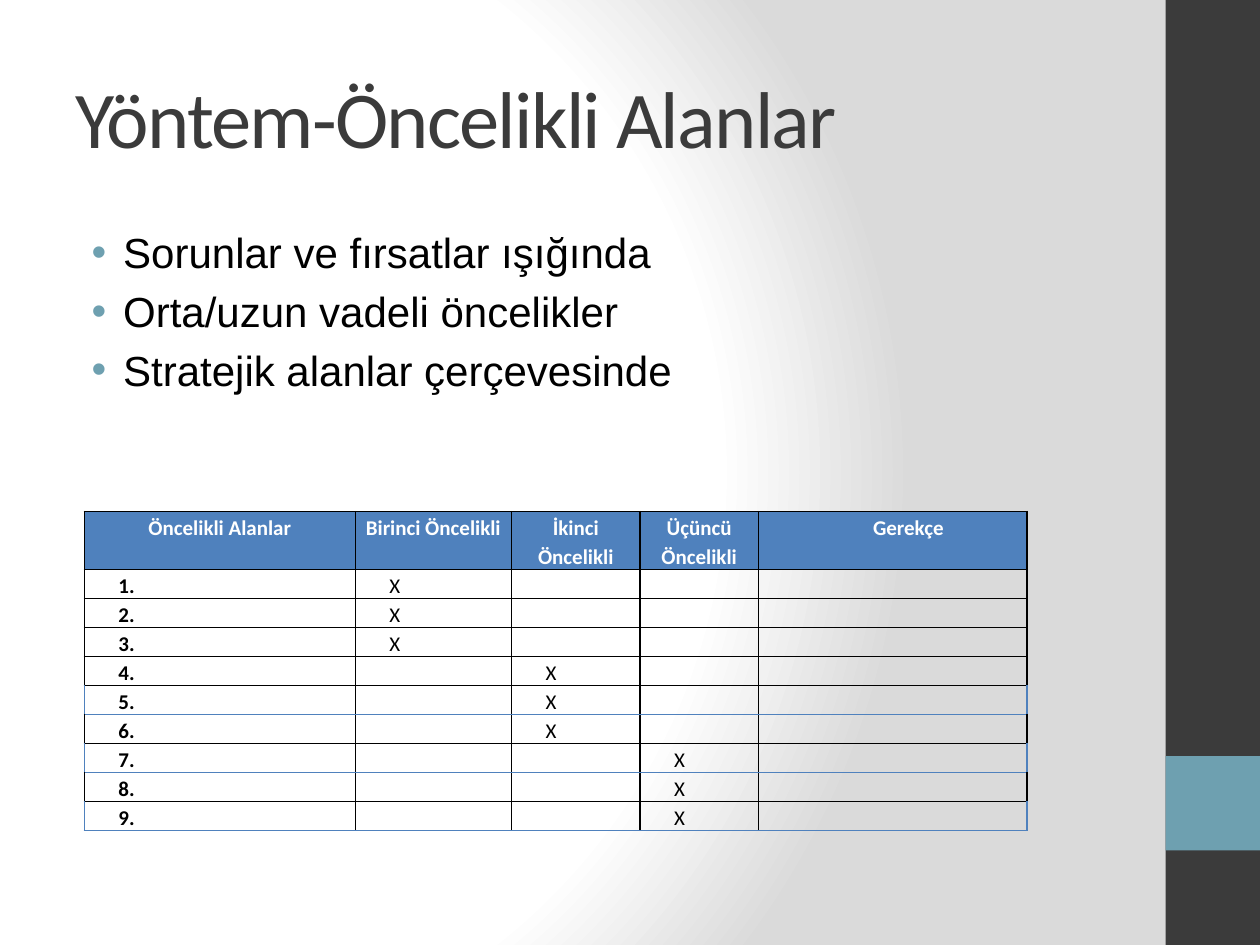
from pptx import Presentation
from pptx.dml.color import RGBColor
from pptx.enum.shapes import MSO_SHAPE as Shape
from pptx.enum.text import MSO_ANCHOR as Anchor, PP_ALIGN as Align
from pptx.oxml import parse_xml
from pptx.oxml.ns import nsdecls, qn
from pptx.util import Inches, Pt
from lxml.etree import SubElement

WHITE = RGBColor(0xFF, 0xFF, 0xFF)
BLACK = RGBColor(0x00, 0x00, 0x00)
GREY = RGBColor(0xDA, 0xDA, 0xDA)
CHARCOAL = RGBColor(0x3B, 0x3B, 0x3B)
TEAL = RGBColor(0x6E, 0xA0, 0xB0)
BLUE = RGBColor(0x4F, 0x81, 0xBD)

BULLETS = ["Sorunlar ve fırsatlar ışığında", "Orta/uzun vadeli öncelikler",
           "Stratejik alanlar çerçevesinde"]
HEADERS = ["Öncelikli Alanlar", "Birinci Öncelikli", "İkinci Öncelikli",
           "Üçüncü Öncelikli", "Gerekçe"]
HEADER_INDENTS = {0: (0.49, -0.49), 4: (0.5, -0.25)}
BODY_INDENT = (0.5, -0.25)
COLUMN_WIDTHS = [2.15, 1.24, 1.02, 0.94, 2.13]
AREA_COUNT = 9
AREAS_PER_PRIORITY = 3


def paint_background(page):
    """Fill the page with a circular gradient, white at the left."""
    stops = "".join(
        f'<a:gs pos="{position * 1000}"><a:srgbClr val="{color}"/></a:gs>'
        for position, color in [(0, WHITE), (75, WHITE), (100, GREY)])
    page.element.cSld.insert(0, parse_xml(
        f'<p:bg {nsdecls("p", "a")}><p:bgPr><a:gradFill rotWithShape="1">'
        f'<a:gsLst>{stops}</a:gsLst><a:path path="circle">'
        '<a:fillToRect l="20000" t="50000" r="100000" b="50000"/></a:path>'
        '</a:gradFill><a:effectLst/></p:bgPr></p:bg>'))


def add_block(page, left, top, width, height, color):
    block = page.shapes.add_shape(Shape.RECTANGLE, Inches(left), Inches(top),
                                  Inches(width), Inches(height))
    block.shadow.inherit = False
    block.fill.solid()
    block.fill.fore_color.rgb = color
    block.line.fill.background()


def add_side_band(page, left, top, width, height):
    add_block(page, left, top, width, height, CHARCOAL)
    add_block(page, left, top + 0.8 * height, width, width, TEAL)


def add_text_box(page, left, top, width, height):
    box = page.shapes.add_textbox(Inches(left), Inches(top),
                                  Inches(width), Inches(height))
    box.text_frame.word_wrap = True
    return box.text_frame


def style_runs(para, size, name, color, bold=False):
    for span in para.runs:
        span.font.size = Pt(size)
        span.font.name = name
        span.font.color.rgb = color
        span.font.bold = bold


def set_indent(para, left, first):
    properties = para._p.get_or_add_pPr()
    properties.set("marL", str(Inches(left)))
    properties.set("indent", str(Inches(first)))
    return properties


def add_title(page, left, top, width, height):
    frame = add_text_box(page, left, top, width, height)
    frame.vertical_anchor = Anchor.MIDDLE
    frame.text = "Yöntem-Öncelikli Alanlar"
    para = frame.paragraphs[0]
    style_runs(para, 46, "Calibri", CHARCOAL)
    para.runs[0].font._element.set("spc", "-100")


def add_bullets(page, left, top, width, height):
    frame = add_text_box(page, left, top, width, height)
    frame.text = "\n".join(BULLETS)
    for para in frame.paragraphs:
        style_runs(para, 24, "Arial", BLACK)
        properties = set_indent(para, 0.38, -0.25)
        space = SubElement(properties, qn("a:spcBef"))
        SubElement(space, qn("a:spcPct"), val="20000")
        bullet_color = SubElement(properties, qn("a:buClr"))
        SubElement(bullet_color, qn("a:srgbClr"), val=str(TEAL))
        SubElement(properties, qn("a:buFont"), typeface="Arial")
        SubElement(properties, qn("a:buChar"), char="•")


def set_borders(cell, **colors):
    """Draw 1 pt borders; colors maps the sides L, R, T and B, black if absent."""
    properties = cell._tc.get_or_add_tcPr()
    for index, side in enumerate("LRTB"):
        properties.insert(index, parse_xml(
            f'<a:ln{side} {nsdecls("a")} w="{Pt(1)}"><a:solidFill>'
            f'<a:srgbClr val="{colors.get(side, BLACK)}"/></a:solidFill></a:ln{side}>'))


def border_colors(row, column):
    """Odd rows from the fifth on have a blue outline below and at both ends."""
    colors = {}
    if row >= 5 and row % 2:
        colors["B"] = BLUE
        if column == 0:
            colors["L"] = BLUE
        if column == len(HEADERS) - 1:
            colors["R"] = BLUE
    elif row > 5:
        colors["T"] = BLUE
    return colors


def fill_cell(cell, text, color, bold, indent):
    cell.margin_left = cell.margin_right = Inches(0.02)
    cell.margin_top = cell.margin_bottom = 0
    cell.text = text
    para = cell.text_frame.paragraphs[0]
    para.line_spacing = 1.15
    set_indent(para, *indent)
    style_runs(para, 12, "Calibri", color, bold)
    if not text:
        end = SubElement(para._p, qn("a:endParaRPr"), sz="1200")
        SubElement(end, qn("a:latin"), typeface="Calibri")
    return para


def body_text(row, column):
    if column == 0:
        return f"{row}."
    return "X" if column == (row - 1) // AREAS_PER_PRIORITY + 1 else ""


def add_priority_table(page, left, top, width, height):
    table = page.shapes.add_table(AREA_COUNT + 1, len(HEADERS), Inches(left),
                                  Inches(top), Inches(width), Inches(height)).table
    # The plain "No Style, No Grid" style leaves the body cells clear.
    table._tbl.tblPr.find(qn("a:tableStyleId")).text = \
        "{2D5ABB26-0587-4C30-8999-92F81FD0307C}"
    table.horz_banding = False
    for column, column_width in zip(table.columns, COLUMN_WIDTHS):
        column.width = Inches(column_width)
    for row, line in enumerate(table.rows):
        line.height = Inches(0.14 if row else 0.32)
        for column, cell in enumerate(line.cells):
            if row:
                fill_cell(cell, body_text(row, column), BLACK, column == 0, BODY_INDENT)
                cell.fill.background()
            else:
                para = fill_cell(cell, HEADERS[column], WHITE, True,
                                 HEADER_INDENTS.get(column, (0, 0)))
                para.alignment = Align.CENTER
                cell.fill.solid()
                cell.fill.fore_color.rgb = BLUE
            set_borders(cell, **border_colors(row, column))


def main():
    deck = Presentation()
    deck.slide_width, deck.slide_height = Inches(10), Inches(7.5)
    page = deck.slides.add_slide(deck.slide_layouts[6])
    paint_background(page)
    add_side_band(page, 9.25, 0, 0.75, 7.5)
    add_title(page, 0.5, 0.3, 8.33, 1.25)
    add_bullets(page, 0.5, 1.75, 8.33, 2.16)
    add_priority_table(page, 0.67, 4.06, 7.48, 2.53)
    deck.save("out.pptx")


if __name__ == "__main__":
    main()
